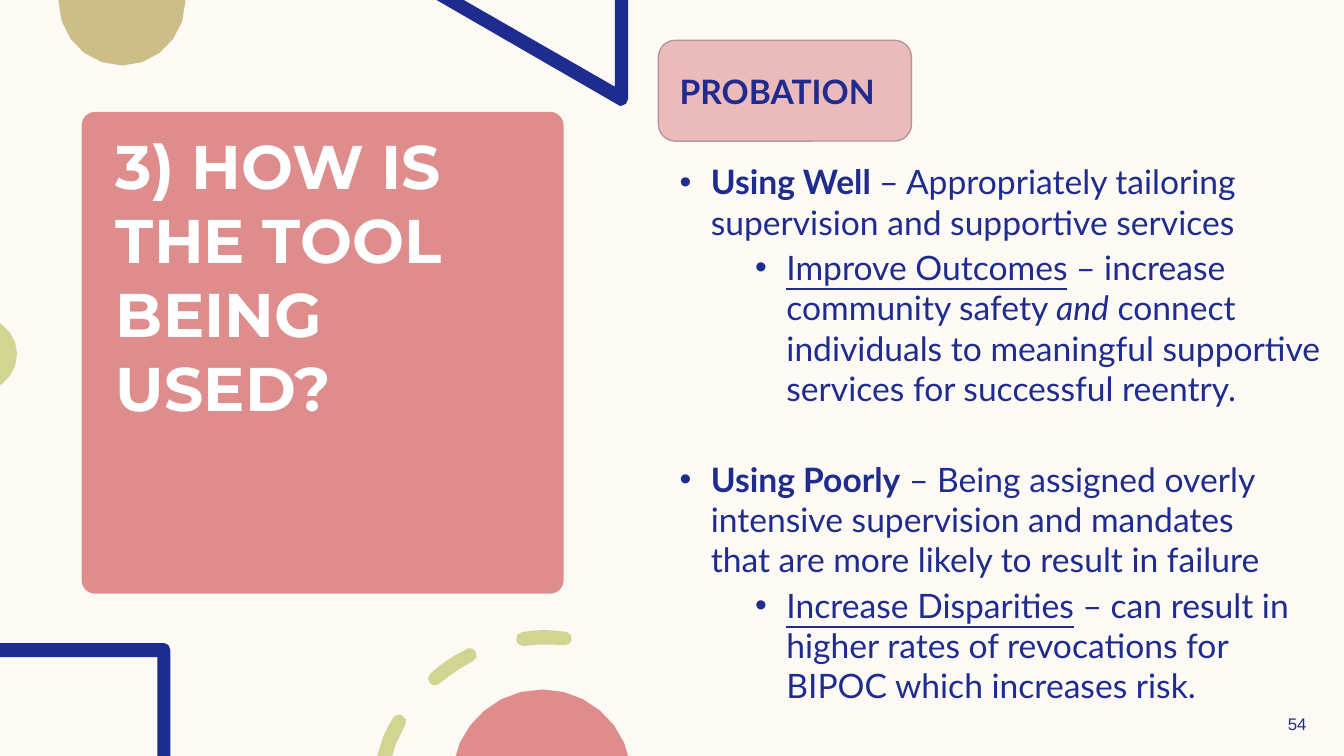
import math

import pptx
import pptx.dml.color
import pptx.enum.shapes
import pptx.enum.text
import pptx.oxml
import pptx.oxml.ns
import pptx.util
from pptx.util import Inches, Pt

RGBColor = pptx.dml.color.RGBColor
CREAM = RGBColor(0xFD, 0xFA, 0xF6)
NAVY = RGBColor(0x1F, 0x2C, 0x8F)
ROSE = RGBColor(0xDE, 0x8C, 0x8C)
BLUSH = RGBColor(0xEB, 0xBA, 0xBA)
MAUVE = RGBColor(0xB5, 0x98, 0x98)
SAND = RGBColor(0xCC, 0xBE, 0x89)
LIME = RGBColor(0xD2, 0xD5, 0x92)
WHITE = RGBColor(0xFF, 0xFF, 0xFF)
ROUNDED = pptx.enum.shapes.MSO_SHAPE.ROUNDED_RECTANGLE
ANCHOR = pptx.enum.text.MSO_ANCHOR
UNITS_PER_INCH = 1000
HARD_SPACE = chr(160)

presentation = pptx.Presentation()
presentation.slide_width = Inches(13.33)
presentation.slide_height = Inches(7.5)
slide = presentation.slides.add_slide(presentation.slide_layouts[1])
slide.background.fill.solid()
slide.background.fill.fore_color.rgb = CREAM
shapes = slide.shapes


def paint(shape, color):
    shape.shadow.inherit = False
    shape.fill.solid()
    shape.fill.fore_color.rgb = color
    shape.line.fill.background()


def add_outline(color, *contours):
    """Draw closed contours: two numbers are a corner, six a cubic curve."""
    builder = None
    for start, *moves in contours:
        points = [start]
        for move in moves:
            knots = [points[-1], move[:2], move[2:4], move[4:]]
            if len(move) == 2:
                points.append(move)
                continue
            steps = math.ceil(4 * math.dist(knots[0], knots[3])) + 1
            for step in range(1, steps + 1):
                t = step / steps
                weights = ((1 - t) ** 3, 3 * t * (1 - t) ** 2, 3 * t * t * (1 - t), t ** 3)
                points.append(tuple(sum(w * knot[axis] for w, knot in zip(weights, knots))
                                    for axis in (0, 1)))
        points = [(x * UNITS_PER_INCH, y * UNITS_PER_INCH) for x, y in points]
        if builder is None:
            builder = shapes.build_freeform(*points[0], scale=Inches(1) / UNITS_PER_INCH)
        else:
            builder.move_to(*points[0])
        builder.add_line_segments(points[1:], close=True)
    paint(builder.convert_to_shape(), color)


# Heading tag and title card
tag = shapes.add_shape(ROUNDED, Inches(6.53), Inches(0.4), Inches(2.51), Inches(1))
paint(tag, BLUSH)
tag.line.color.rgb = MAUVE
tag.line.width = Pt(1)

card = shapes.add_shape(ROUNDED, Inches(0.81), Inches(1.11), Inches(4.78), Inches(4.78))
paint(card, ROSE)
card.adjustments[0] = 0.028

question = shapes.title
question.left, question.top = Inches(1.05), Inches(1.22)
question.width, question.height = Inches(4.31), Inches(4.56)
question.text_frame.text = "3) HOW IS THE TOOL BEING USED?"
question.text_frame.vertical_anchor = ANCHOR.TOP
question.text_frame.auto_size = pptx.enum.text.MSO_AUTO_SIZE.NONE
paragraph = question.text_frame.paragraphs[0]
paragraph.alignment = pptx.enum.text.PP_ALIGN.LEFT
paragraph.font.name = "Montserrat"
paragraph.font.size = Pt(44)
paragraph.font.bold = True
paragraph.font.color.rgb = WHITE
shapes.element.append(question.element)

# Decorations at the slide edges
add_outline(SAND, [(1.84, 0), (0.58, 0), (0.58, 0.01), (0.58, 0.36, 0.86, 0.65, 1.21, 0.65),
                   (1.56, 0.65, 1.84, 0.36, 1.84, 0.01)])
add_outline(NAVY, [(6.23, 0), (6.1, 0), (6.1, 0.86), (4.6, 0), (4.33, 0), (6.13, 1.04),
                   (6.14, 1.05, 6.15, 1.05, 6.16, 1.05), (6.2, 1.05, 6.23, 1.02, 6.23, 0.98)])
add_outline(LIME, [(0, 3.21), (0, 3.82), (0.02, 3.81), (0.11, 3.74, 0.17, 3.64, 0.17, 3.51),
                   (0.17, 3.39, 0.11, 3.29, 0.02, 3.22)])
add_outline(NAVY, [(1.63, 6.38), (0, 6.38), (0, 6.52), (1.56, 6.52), (1.56, 7.5), (1.69, 7.5),
                   (1.69, 6.45), (1.69, 6.41, 1.66, 6.38, 1.63, 6.38)])
add_outline(
    LIME,
    [(3.97, 7.09), (3.94, 7.08, 3.92, 7.1, 3.9, 7.12), (3.86, 7.18, 3.83, 7.25, 3.8, 7.31),
     (3.74, 7.5), (3.89, 7.5), (3.93, 7.37), (3.96, 7.31, 3.99, 7.25, 4.02, 7.19),
     (4.04, 7.16, 4.03, 7.11, 3.99, 7.1)],
    [(4.65, 6.43), (4.63, 6.44), (4.5, 6.5, 4.38, 6.58, 4.27, 6.68),
     (4.24, 6.7, 4.24, 6.75, 4.26, 6.77), (4.27, 6.79, 4.29, 6.8, 4.31, 6.8),
     (4.33, 6.8, 4.35, 6.79, 4.36, 6.78), (4.46, 6.7, 4.57, 6.62, 4.69, 6.56),
     (4.73, 6.54, 4.74, 6.5, 4.72, 6.47), (4.71, 6.44, 4.68, 6.43, 4.65, 6.43)],
    [(5.4, 6.25), (5.32, 6.25, 5.25, 6.26, 5.18, 6.27), (5.14, 6.27, 5.11, 6.31, 5.12, 6.35),
     (5.12, 6.38, 5.15, 6.41, 5.19, 6.41), (5.33, 6.39, 5.46, 6.39, 5.6, 6.4),
     (5.63, 6.41, 5.67, 6.38, 5.67, 6.35), (5.68, 6.31, 5.65, 6.27, 5.62, 6.27),
     (5.54, 6.26, 5.47, 6.25, 5.4, 6.25)])
add_outline(ROSE, [(5.38, 6.84), (5.01, 6.84, 4.7, 7.06, 4.56, 7.37), (4.52, 7.5), (6.23, 7.5),
                   (6.19, 7.37), (6.06, 7.06, 5.74, 6.84, 5.38, 6.84)])

# Probation points: level, left margin, space before, then (text, emphasis) runs
GAP, SECTION_GAP = 3.6, 36
points = [
    (0, 0, GAP, [("PROBATION", "bold")]),
    (0, 0.31, SECTION_GAP, [
        ("Using Well ", "bold"),
        ("– Appropriately tailoring supervision and supportive services", None)]),
    (1, 1.06, GAP, [
        ("Improve Outcomes", "underline"), (" – increase community safety ", None),
        ("and", "italic"),
        (HARD_SPACE + "connect individuals to meaningful supportive services "
         "for successful reentry.", None)]),
    (0, 0.31, SECTION_GAP, [
        ("Using Poorly", "bold"),
        (" – Being assigned overly intensive supervision and mandates "
         f"that{HARD_SPACE}are more likely to result in failure", None)]),
    (1, 1.06, GAP, [
        ("Increase Disparities", "underline"),
        (" – can result in higher rates of revocations for BIPOC which increases risk.",
         None)]),
]
probation = slide.placeholders[1]
probation.left, probation.top = Inches(6.64), Inches(0.65)
probation.width, probation.height = Inches(6.69), Inches(6.85)
probation.text_frame.vertical_anchor = ANCHOR.TOP
probation.text_frame.auto_size = pptx.enum.text.MSO_AUTO_SIZE.NONE
shapes.element.append(probation.element)
nsdecls = pptx.oxml.ns.nsdecls("a")
for index, (level, margin, space_before, runs) in enumerate(points):
    if index == 0:
        paragraph = probation.text_frame.paragraphs[0]
    else:
        paragraph = probation.text_frame.add_paragraph()
    paragraph.level = level
    paragraph.space_before = Pt(space_before)
    properties = paragraph._p.get_or_add_pPr()
    properties.set("marL", str(Inches(margin)))
    properties.set("indent", str(Inches(-0.31 if margin else 0)))
    bullet = ['<a:buFont %s typeface="Arial"/>', '<a:buChar %s char="•"/>']
    for tag_xml in bullet if margin else ["<a:buNone %s/>"]:
        properties.append(pptx.oxml.parse_xml(tag_xml % nsdecls))
    paragraph.font.name = "Lato"
    paragraph.font.size = Pt(24)
    paragraph.font.color.rgb = NAVY
    for text, emphasis in runs:
        run = paragraph.add_run()
        run.text = text
        if emphasis:
            setattr(run.font, emphasis, True)

page_number = shapes.add_textbox(Inches(12.4), Inches(6.98), Inches(0.93), Inches(0.4))
page_number.text_frame.word_wrap = True
page_number.text_frame.vertical_anchor = ANCHOR.MIDDLE
page_number.text_frame.text = "54"
paragraph = page_number.text_frame.paragraphs[0]
paragraph.alignment = pptx.enum.text.PP_ALIGN.CENTER
paragraph.font.name = "Arial"
paragraph.font.size = Pt(12)
paragraph.font.color.rgb = NAVY

presentation.save("out.pptx")
